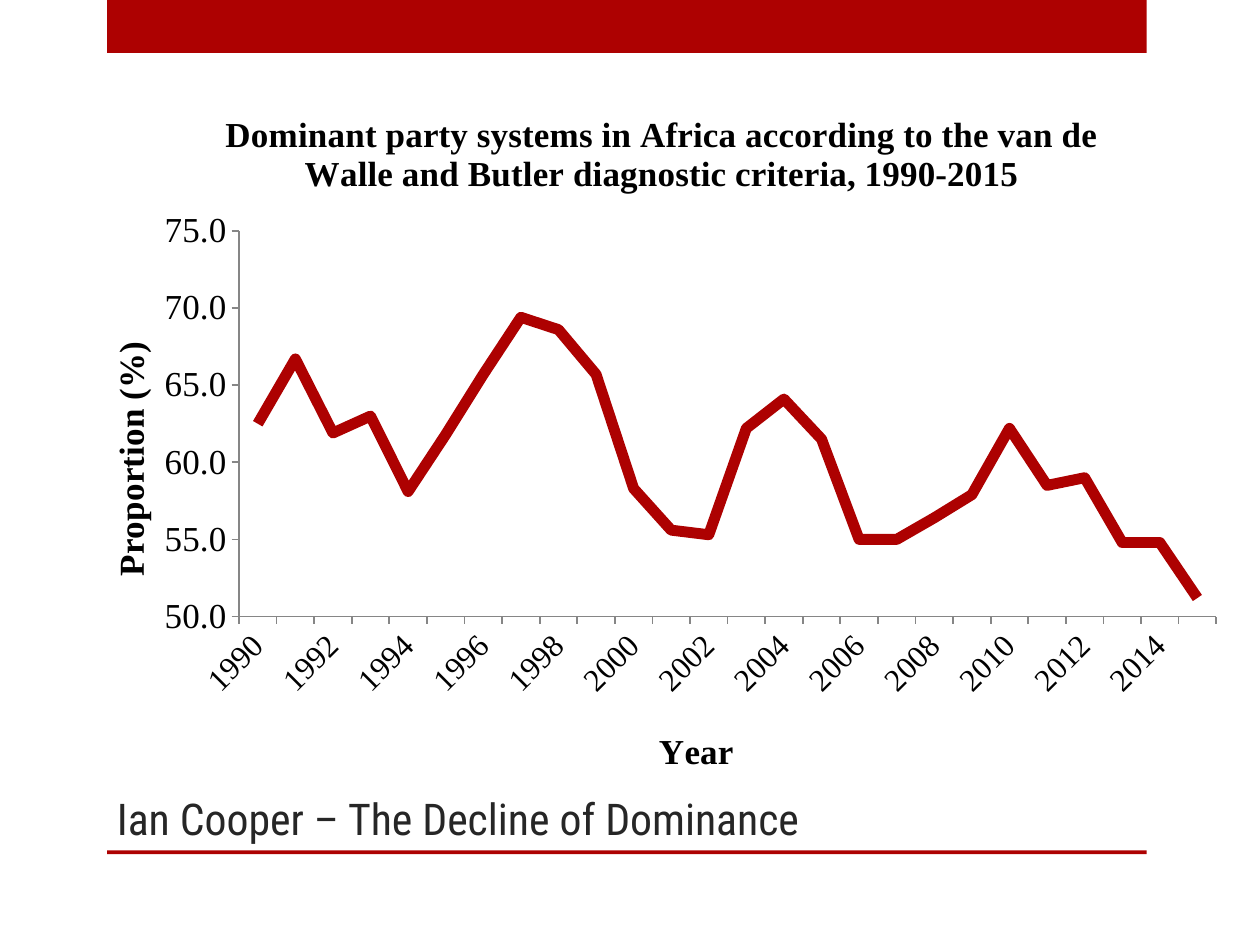
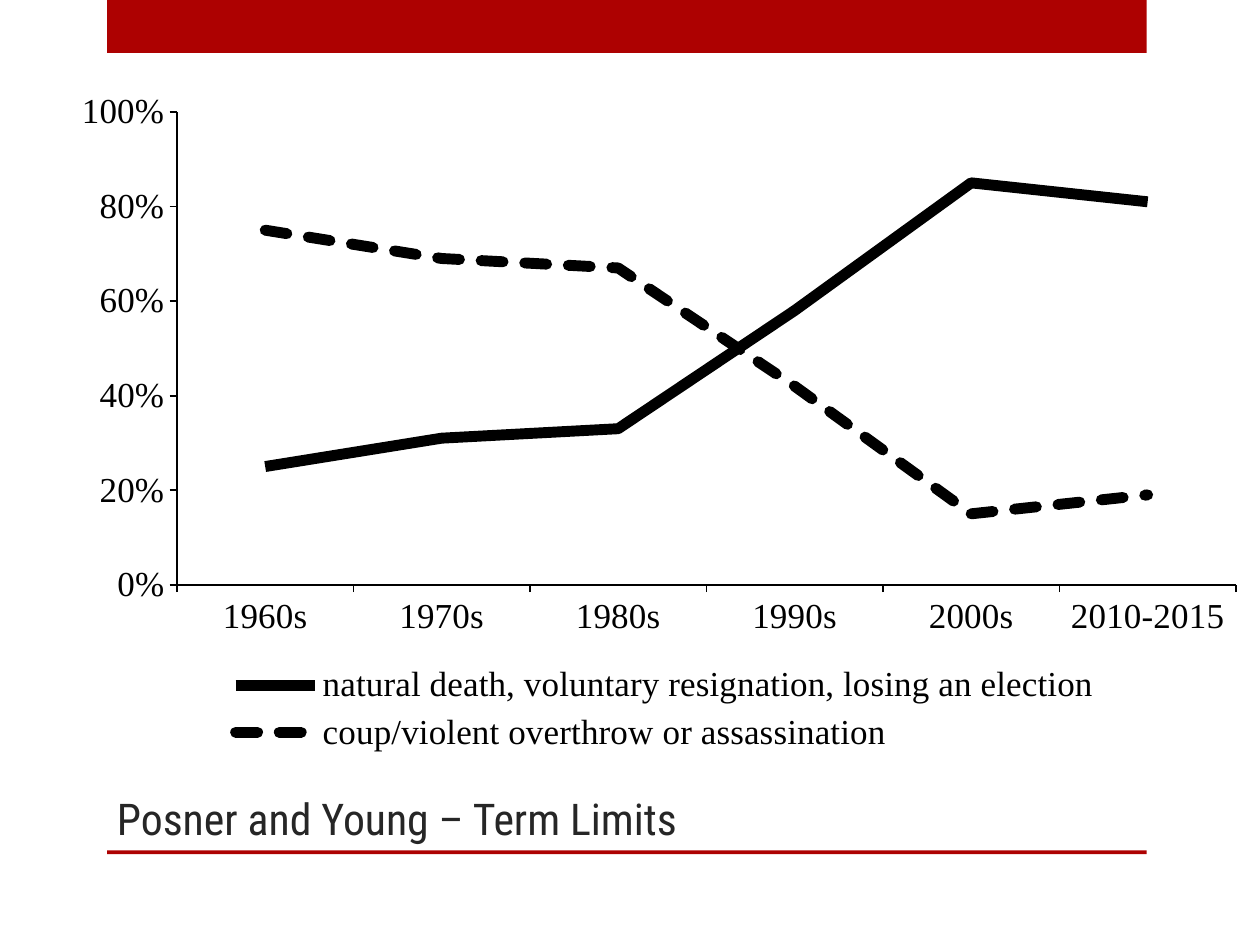
from dataclasses import dataclass
from typing import Optional

from lxml.etree import SubElement
from pptx import Presentation
from pptx.chart.axis import CategoryAxis
from pptx.chart.chart import Chart
from pptx.chart.data import CategoryChartData
from pptx.dml.color import RGBColor
from pptx.enum.chart import XL_CHART_TYPE as CHART, XL_LEGEND_POSITION as LEGEND
from pptx.enum.chart import XL_MARKER_STYLE as MARKER, XL_TICK_MARK as TICK
from pptx.enum.dml import MSO_LINE as DASH
from pptx.enum.shapes import MSO_SHAPE as SHAPE
from pptx.enum.text import MSO_ANCHOR as ANCHOR
from pptx.oxml import parse_xml
from pptx.oxml.ns import nsdecls, qn
from pptx.slide import Slide
from pptx.util import Inches, Pt

RED, BLACK, GREY, INK = "AD0101", "000000", "868686", "262626"
TITLE_FONT, CHART_FONT = "Roboto Condensed", "Times New Roman"
LABEL_SIZE = 20
Box = tuple[float, ...]


@dataclass
class Band:
    top: float
    height: float


@dataclass
class Series:
    name: str
    values: list[float]
    color: str
    dashed: bool = False


@dataclass
class Heading:
    text: str
    place: Box


@dataclass
class LineSlide:
    title: str
    box: Box
    plot: Box
    categories: list[str]
    series: list[Series]
    scale: dict[str, float]
    number_format: str
    axis_color: str
    category_size: int = LABEL_SIZE
    label_step: int = 1
    label_turn: int = 0
    heading: Optional[Heading] = None
    category_title: Optional[Heading] = None
    value_title: Optional[Heading] = None
    legend: Optional[Box] = None


BANDS = [Band(0, 0.42), Band(6.75, 0.03)]

SLIDES = [
    LineSlide(
        title="Ian Cooper – The Decline of Dominance",
        box=(0.53, 0.61, 9.3, 5.69),
        plot=(0.147, 0.215, 0.834, 0.538),
        categories=[str(year) for year in range(1990, 2016)],
        series=[Series("Series 1", [
            62.5, 66.7, 61.9, 63, 58.1, 61.8, 65.7, 69.4, 68.6, 65.7, 58.3, 55.6, 55.3,
            62.2, 64.1, 61.5, 55, 55, 56.4, 57.9, 62.2, 58.5, 59, 54.8, 54.8, 51.2], RED)],
        scale=dict(minimum_scale=50, maximum_scale=75, major_unit=5),
        number_format="0.0",
        axis_color=GREY,
        category_size=18,
        label_step=2,
        label_turn=-45,
        heading=Heading("Dominant party systems in Africa according to the van de Walle "
                        "and Butler diagnostic criteria, 1990-2015", (0.13, 0.04)),
        category_title=Heading("Year", (0.5, 0.9)),
        value_title=Heading("Proportion (%)", (0.03, 0.36)),
    ),
    LineSlide(
        title="Posner and Young – Term Limits",
        box=(0.46, 0.63, 9.54, 5.4),
        plot=(0.099, 0.048, 0.881, 0.695),
        categories=["1960s", "1970s", "1980s", "1990s", "2000s", "2010-2015"],
        series=[
            Series("natural death, voluntary resignation, losing an election",
                   [0.25, 0.31, 0.33, 0.58, 0.85, 0.81], BLACK),
            Series("coup/violent overthrow or assassination",
                   [0.75, 0.69, 0.67, 0.42, 0.15, 0.19], BLACK, dashed=True),
        ],
        scale=dict(minimum_scale=0, maximum_scale=1, major_unit=0.2),
        number_format="0%",
        axis_color=BLACK,
        legend=(0.13, 0.85, 0.75, 0.15),
    ),
]


def rgb(value: str) -> RGBColor:
    return RGBColor.from_string(value)


def set_font(font, name: str, size: float, color: str, bold: bool = False) -> None:
    for key, value in dict(name=name, size=Pt(size), bold=bold).items():
        setattr(font, key, value)
    font.color.rgb = rgb(color)


def place(parent, index: int, box: Box, inner: bool = False) -> None:
    old = parent.find(qn("c:layout"))
    if old is not None:
        parent.remove(old)
    layout = parse_xml(f"<c:layout {nsdecls('c')}><c:manualLayout/></c:layout>")
    fields = [("layoutTarget", "inner")] if inner else []
    fields += [("xMode", "edge"), ("yMode", "edge"), *zip("xywh", box)]
    for tag, value in fields:
        SubElement(layout[0], qn(f"c:{tag}")).set("val", str(value))
    parent.insert(index, layout)


def add_heading(owner, heading: Optional[Heading]) -> None:
    owner.has_title = heading is not None
    if heading is None:
        return
    title = owner.chart_title if isinstance(owner, Chart) else owner.axis_title
    r = title.text_frame.paragraphs[0].add_run()
    r.text = heading.text
    set_font(r.font, CHART_FONT, LABEL_SIZE, BLACK, bold=True)
    place(title._element, 1, heading.place)


def style_axis(axis, size: float, color: str) -> None:
    formats = dict(has_major_gridlines=False, has_minor_gridlines=False,
                   major_tick_mark=TICK.OUTSIDE, minor_tick_mark=TICK.NONE)
    for key, value in formats.items():
        setattr(axis, key, value)
    axis.format.line.color.rgb = rgb(color)
    axis.format.line.width = Pt(1)
    set_font(axis.tick_labels.font, CHART_FONT, size, BLACK)


def space_labels(axis: CategoryAxis, step: int, turn: int) -> None:
    el = axis._element
    el.find(qn("c:txPr")).find(qn("a:bodyPr")).set("rot", str(turn * 60000))
    end = el.find(qn("c:noMultiLvlLbl"))
    for tag, value in (("tickLblSkip", step), ("tickMarkSkip", 1)):
        end.addprevious(parse_xml(f'<c:{tag} {nsdecls("c")} val="{value}"/>'))


def style_series(line_series, series: Series) -> None:
    line_series.smooth = False
    line_series.marker.style = MARKER.NONE
    line = line_series.format.line
    line.color.rgb = rgb(series.color)
    line.width = Pt(6.25)
    ln = line_series._element.find(qn("c:spPr")).find(qn("a:ln"))
    if series.dashed:
        line.dash_style = DASH.SQUARE_DOT
        ln.find(qn("a:prstDash")).set("val", "sysDash")
    ln.set("cap", "rnd" if series.dashed else "flat")
    SubElement(ln, qn("a:round"))


def add_line_chart(s: Slide, spec: LineSlide) -> None:
    data = CategoryChartData(number_format=spec.number_format)
    data.categories = spec.categories
    for series in spec.series:
        data.add_series(series.name, series.values)
    chart = s.shapes.add_chart(CHART.LINE, *map(Inches, spec.box), data).chart
    set_font(chart.font, CHART_FONT, 10, BLACK)
    add_heading(chart, spec.heading)

    category, value = chart.category_axis, chart.value_axis
    style_axis(category, spec.category_size, spec.axis_color)
    style_axis(value, LABEL_SIZE, spec.axis_color)
    space_labels(category, spec.label_step, spec.label_turn)
    add_heading(category, spec.category_title)
    add_heading(value, spec.value_title)
    for key, number in spec.scale.items():
        setattr(value, key, number)
    value.tick_labels.number_format = spec.number_format
    value.tick_labels.number_format_is_linked = False

    plot = chart.plots[0]
    plot.vary_by_categories = False
    for line_series, series in zip(plot.series, spec.series):
        style_series(line_series, series)
    place(chart._chartSpace.chart.plotArea, 0, spec.plot, inner=True)

    chart.has_legend = spec.legend is not None
    if spec.legend is not None:
        chart.legend.position = LEGEND.BOTTOM
        chart.legend.include_in_layout = False
        set_font(chart.legend.font, CHART_FONT, LABEL_SIZE, BLACK)
        place(chart.legend._element, 1, spec.legend)


def add_band(s: Slide, band: Band) -> None:
    sp = s.shapes.add_shape(SHAPE.RECTANGLE, Inches(0.85), Inches(band.top),
                            Inches(8.25), Inches(band.height))
    sp.shadow.inherit = False
    sp.fill.solid()
    sp.fill.fore_color.rgb = rgb(RED)
    sp.line.fill.background()


def add_title(s: Slide, text: str) -> None:
    tf = s.shapes.add_textbox(Inches(0.83), Inches(5), Inches(7.42), Inches(1.75)).text_frame
    tf.word_wrap = True
    tf.vertical_anchor = ANCHOR.BOTTOM
    r = tf.paragraphs[0].add_run()
    r.text = text
    set_font(r.font, TITLE_FONT, 25, INK)


def main() -> None:
    prs = Presentation()
    prs.slide_width, prs.slide_height = Inches(10), Inches(7.5)
    for content in SLIDES:
        s = prs.slides.add_slide(prs.slide_layouts[6])
        for band in BANDS:
            add_band(s, band)
        add_title(s, content.title)
        add_line_chart(s, content)
    prs.save("out.pptx")


if __name__ == "__main__":
    main()
